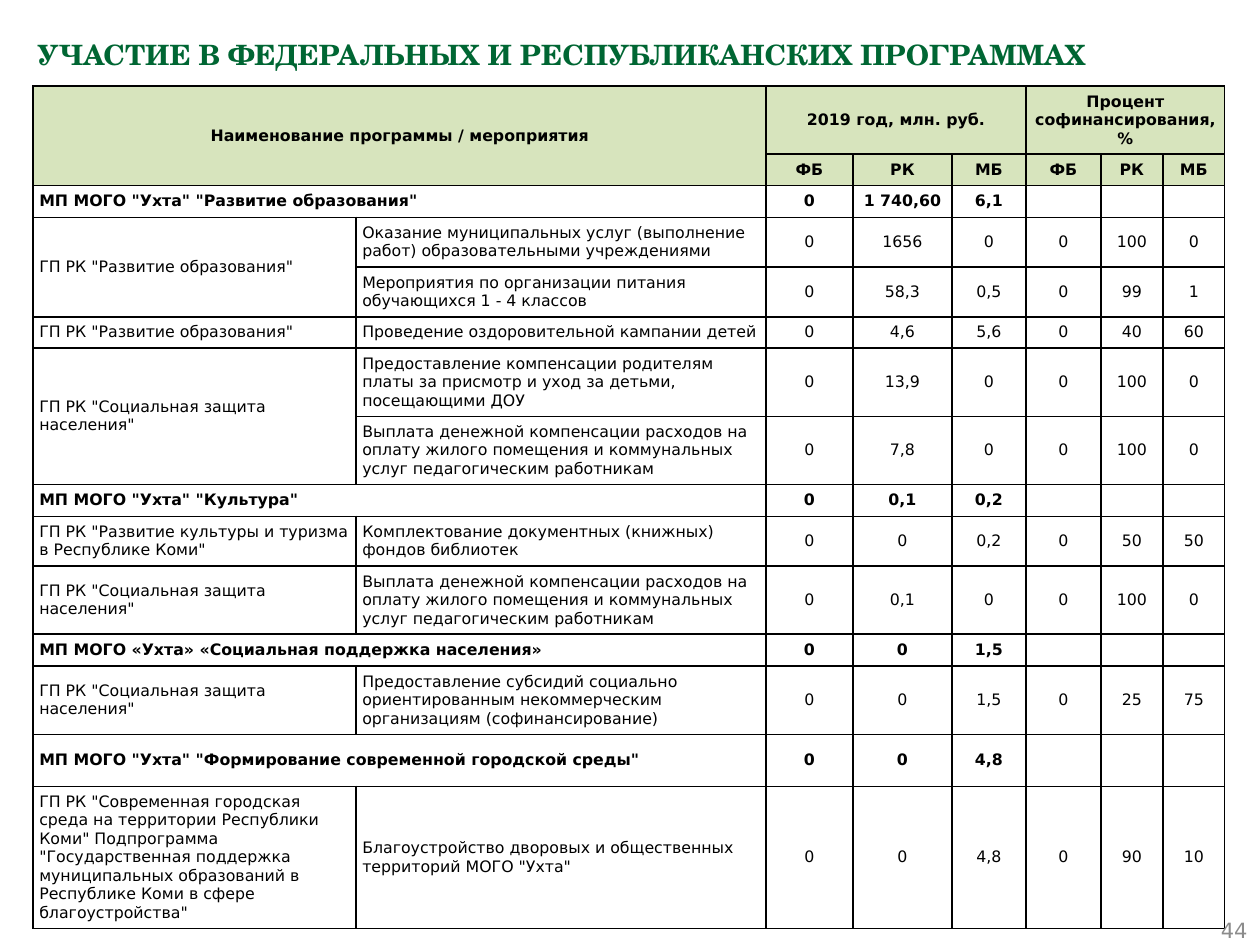
from lxml import etree
from pptx import Presentation
from pptx import util as u
from pptx.dml import color
from pptx.enum import text
from pptx.oxml import ns

SCALE = u.Inches(1) / 126
FONT = "DejaVu Sans"
BLACK = "000000"
HEADER_FILL = "D7E4BD"
COLUMN_WIDTHS = [323, 410, 87, 99, 74, 75, 62, 62]
ROW_HEIGHTS = [68, 31, 32, 49, 50, 31, 68, 68, 32, 49, 68, 32, 68, 52, 142]
EDUCATION = 'ГП РК "Развитие образования"'
WELFARE = 'ГП РК "Социальная защита населения"'
COMPENSATION = (
    "Выплата денежной компенсации расходов на оплату жилого помещения "
    "и коммунальных услуг педагогическим работникам"
)
HEADER = [
    ["Наименование программы / мероприятия", "", "2019 год, млн. руб.", "", "",
     "Процент софинансирования, %", "", ""],
    ["", "", "ФБ", "РК", "МБ", "ФБ", "РК", "МБ"],
]
HEADER_MERGES = [((0, 0), (1, 1)), ((0, 2), (0, 4)), ((0, 5), (0, 7))]
PROGRAMS = [
    ['МП МОГО "Ухта" "Развитие образования"', "", "0", "1 740,60", "6,1", "", "", ""],
    [EDUCATION, "Оказание муниципальных услуг (выполнение работ) образовательными учреждениями",
     "0", "1656", "0", "0", "100", "0"],
    ["", "Мероприятия по организации питания обучающихся 1 - 4 классов",
     "0", "58,3", "0,5", "0", "99", "1"],
    [EDUCATION, "Проведение оздоровительной кампании детей", "0", "4,6", "5,6", "0", "40", "60"],
    [WELFARE, "Предоставление компенсации родителям платы за присмотр и уход за детьми, "
     "посещающими ДОУ", "0", "13,9", "0", "0", "100", "0"],
    ["", COMPENSATION, "0", "7,8", "0", "0", "100", "0"],
    ['МП МОГО "Ухта" "Культура"', "", "0", "0,1", "0,2", "", "", ""],
    ['ГП РК "Развитие культуры и туризма в Республике Коми"',
     "Комплектование документных (книжных) фондов библиотек", "0", "0", "0,2", "0", "50", "50"],
    [WELFARE, COMPENSATION, "0", "0,1", "0", "0", "100", "0"],
    ["МП МОГО «Ухта» «Социальная поддержка населения»", "", "0", "0", "1,5", "", "", ""],
    [WELFARE, "Предоставление субсидий социально ориентированным некоммерческим организациям "
     "(софинансирование)", "0", "0", "1,5", "0", "25", "75"],
    ['МП МОГО "Ухта" "Формирование современной городской среды"', "",
     "0", "0", "4,8", "", "", ""],
    ['ГП РК "Современная городская среда на территории Республики Коми" Подпрограмма '
     '"Государственная поддержка муниципальных образований в Республике Коми в сфере '
     'благоустройства"',
     'Благоустройство дворовых и общественных территорий МОГО "Ухта"',
     "0", "0", "4,8", "0", "90", "10"],
]


def px(length):
    return u.Emu(round(length * SCALE))


def rgb(value):
    return color.RGBColor.from_string(value)


def add_run(paragraph, content, size, font, fill, bold=False):
    run = paragraph.add_run()
    run.text = content
    run.font.size = u.Pt(size)
    run.font.name = font
    run.font.bold = bold
    run.font.color.rgb = rgb(fill)


def add_title(slide, left, top, width, height):
    title = slide.shapes.title
    title.left, title.top, title.width, title.height = map(px, (left, top, width, height))
    frame = title.text_frame
    frame.word_wrap = True
    frame.auto_size = text.MSO_AUTO_SIZE.NONE
    frame.vertical_anchor = text.MSO_ANCHOR.TOP
    paragraph = frame.paragraphs[0]
    paragraph.alignment = text.PP_ALIGN.LEFT
    paragraph.line_spacing = 1.2
    add_run(paragraph, "УЧАСТИЕ В ФЕДЕРАЛЬНЫХ И РЕСПУБЛИКАНСКИХ ПРОГРАММАХ",
            16, "TeX Gyre Schola", "006633", True)


def add_borders(cell):
    properties = cell._tc.get_or_add_tcPr()
    for side in ("a:lnL", "a:lnR", "a:lnT", "a:lnB"):
        line = etree.SubElement(properties, ns.qn(side), w=str(u.Pt(1)))
        fill = etree.SubElement(line, ns.qn("a:solidFill"))
        etree.SubElement(fill, ns.qn("a:srgbClr"), val=BLACK)


def format_cell(cell, content, centered, bold, fill):
    add_borders(cell)
    cell.margin_left = cell.margin_right = cell.margin_top = cell.margin_bottom = u.Inches(0.05)
    cell.vertical_anchor = text.MSO_ANCHOR.MIDDLE
    if fill:
        cell.fill.solid()
        cell.fill.fore_color.rgb = rgb(fill)
    else:
        cell.fill.background()
    paragraph = cell.text_frame.paragraphs[0]
    paragraph.alignment = text.PP_ALIGN.CENTER if centered else text.PP_ALIGN.LEFT
    if content:
        add_run(paragraph, content, 9, FONT, BLACK, bold)
    else:
        etree.SubElement(paragraph._p, ns.qn("a:endParaRPr"), sz="900")


def merge_cells(table):
    for start, end in HEADER_MERGES:
        table.cell(*start).merge(table.cell(*end))
    for row, (program, activity, *_) in enumerate(PROGRAMS, len(HEADER)):
        if not activity:
            table.cell(row, 0).merge(table.cell(row, 1))
        elif not program:
            table.cell(row - 1, 0).merge(table.cell(row, 0))


def add_program_table(slide, left, top):
    rows = HEADER + PROGRAMS
    table = slide.shapes.add_table(
        len(rows), len(COLUMN_WIDTHS), px(left), px(top),
        px(sum(COLUMN_WIDTHS)), px(sum(ROW_HEIGHTS)),
    ).table
    table.first_row = False
    table.horz_banding = False
    for column, width in zip(table.columns, COLUMN_WIDTHS):
        column.width = px(width)
    for row, height in zip(table.rows, ROW_HEIGHTS):
        row.height = px(height)
    for row, values in enumerate(rows):
        is_header = row < len(HEADER)
        bold = is_header or not values[1]
        fill = HEADER_FILL if is_header else None
        for column, content in enumerate(values):
            format_cell(table.cell(row, column), content, is_header or column > 1, bold, fill)
    merge_cells(table)


def add_page_number(slide, left, top, width, height):
    frame = slide.shapes.add_textbox(*map(px, (left, top, width, height))).text_frame
    frame.word_wrap = True
    frame.vertical_anchor = text.MSO_ANCHOR.MIDDLE
    paragraph = frame.paragraphs[0]
    paragraph.alignment = text.PP_ALIGN.RIGHT
    add_run(paragraph, "44", 12, FONT, "8C8C8C")


def main():
    presentation = Presentation()
    presentation.slide_width = px(1260)
    presentation.slide_height = px(945)
    slide = presentation.slides.add_slide(presentation.slide_layouts[5])
    add_title(slide, 25, 25, 1211, 100)
    add_program_table(slide, 33, 86)
    add_page_number(slide, 966, 905, 294, 50)
    presentation.save("out.pptx")


if __name__ == "__main__":
    main()
